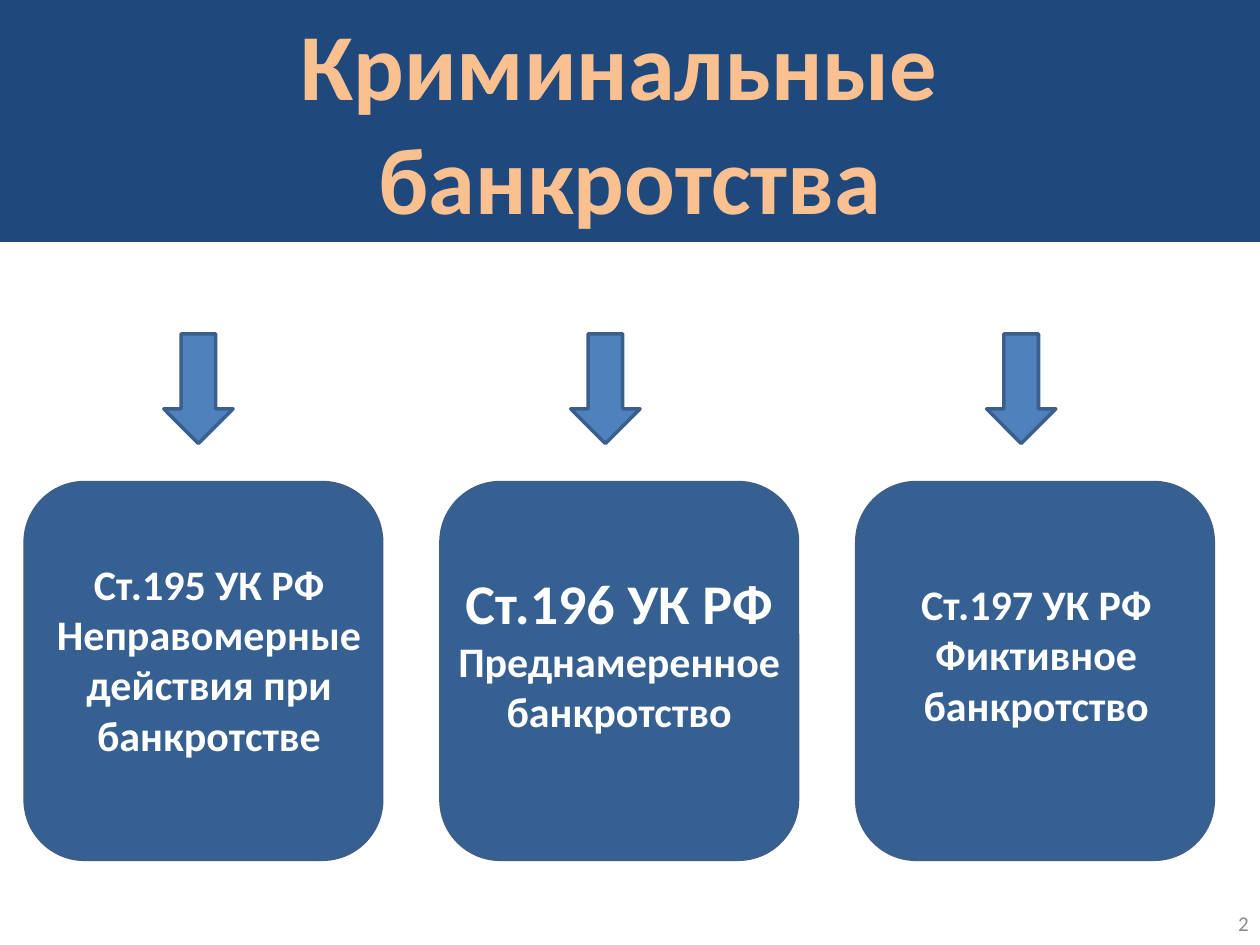
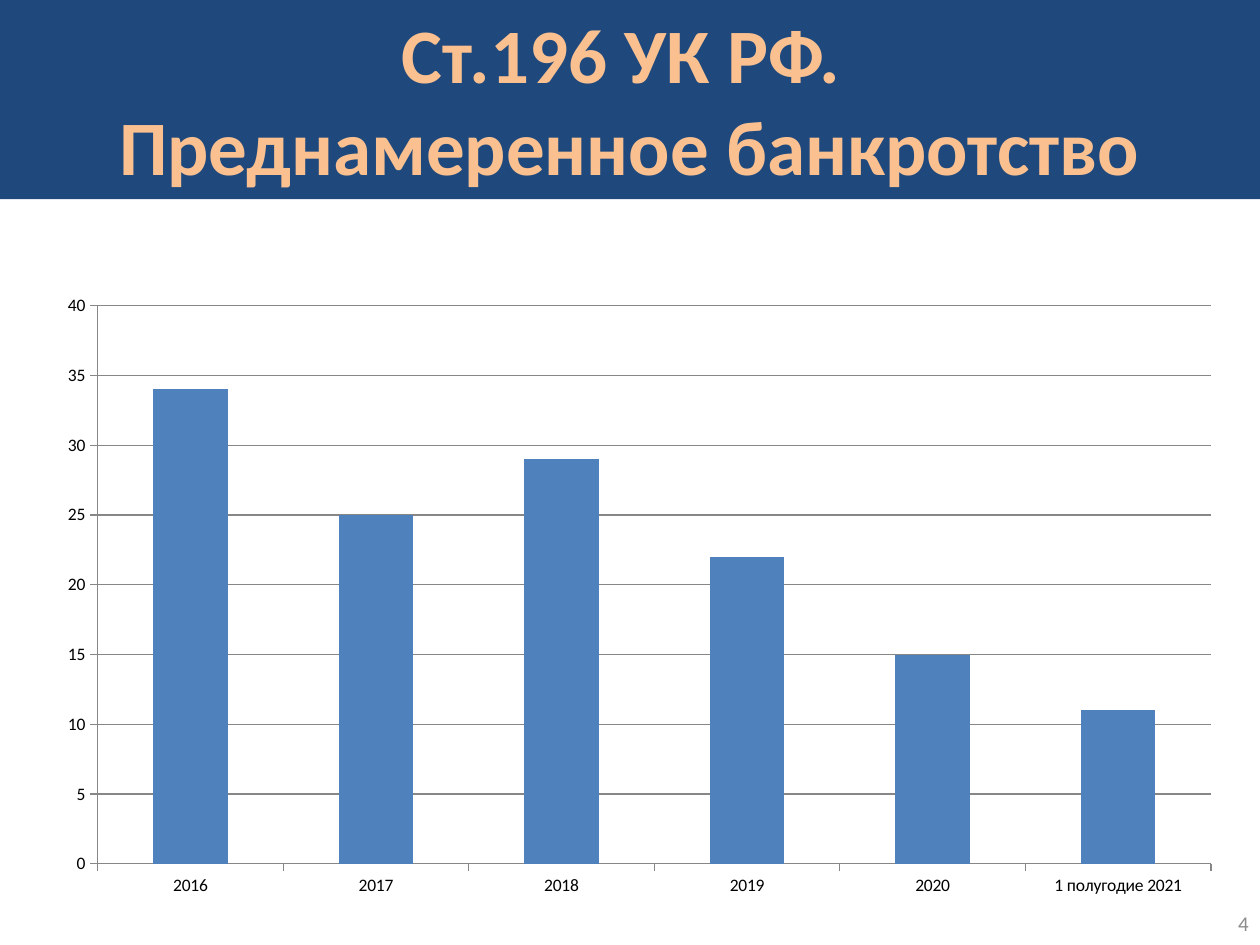
from pptx import Presentation
from pptx.chart.data import CategoryChartData
from pptx.dml.color import RGBColor
from pptx.enum.chart import XL_CHART_TYPE, XL_TICK_MARK
from pptx.enum.shapes import MSO_SHAPE
from pptx.enum.text import MSO_ANCHOR, PP_ALIGN
from pptx.util import Inches, Pt

# Shared style
NAVY = RGBColor(0x1F, 0x49, 0x7D)
PEACH = RGBColor(0xFA, 0xC0, 0x90)
CARD_BLUE = RGBColor(0x37, 0x60, 0x92)
BLUE = RGBColor(0x4F, 0x81, 0xBD)
OUTLINE = RGBColor(0x3A, 0x5F, 0x8C)
GRAY = RGBColor(0x8C, 0x8C, 0x8C)
AXIS_GRAY = RGBColor(0x87, 0x87, 0x87)
WHITE = RGBColor(0xFF, 0xFF, 0xFF)
BLACK = RGBColor(0, 0, 0)
FONT = "Calibri"

RECT = MSO_SHAPE.RECTANGLE
ROUND_RECT = MSO_SHAPE.ROUNDED_RECTANGLE
DOWN_ARROW = MSO_SHAPE.DOWN_ARROW
TOP, MIDDLE = MSO_ANCHOR.TOP, MSO_ANCHOR.MIDDLE
CENTER, RIGHT = PP_ALIGN.CENTER, PP_ALIGN.RIGHT
COLUMN = XL_CHART_TYPE.COLUMN_CLUSTERED
TICK_OUT = XL_TICK_MARK.OUTSIDE

# Cards: arrow left, text left, top, width, height, lines with sizes
CARD_LEFT, CARD_STEP = 0.2, 3.3
CARDS = [
    (1.3, (0.28, 4.38, 2.76, 2.02),
     [("Ст.195 УК РФ", 24), ("Неправомерные действия при банкротстве", 24)]),
    (4.53, (3.5, 4.46, 2.83, 1.75),
     [("Ст.196 УК РФ", 32), ("Преднамеренное банкротство", 24)]),
    (7.83, (6.81, 4.54, 2.83, 1.62),
     [("Ст.197 УК РФ", 24), ("Фиктивное банкротство", 24)]),
]

CASES_BY_YEAR = {"2016": 34, "2017": 25, "2018": 29, "2019": 22, "2020": 15,
                 "1 полугодие 2021": 11}


def write_lines(tf, lines, color, bold=True, align=CENTER, anchor=TOP):
    tf.word_wrap = True
    tf.vertical_anchor = anchor
    tf.text = "\n".join(text for text, _ in lines)
    for p, (_, size) in zip(tf.paragraphs, lines):
        p.alignment = align
        font = p.runs[0].font
        font.name, font.size, font.bold = FONT, Pt(size), bold
        font.color.rgb = color


def add_block(slide, kind, box, fill, line=None):
    sp = slide.shapes.add_shape(kind, *map(Inches, box))
    sp.shadow.inherit = False
    sp.fill.solid()
    sp.fill.fore_color.rgb = fill
    if line is None:
        sp.line.fill.background()
    else:
        sp.line.color.rgb = line
        sp.line.width = Pt(2)
    return sp


def add_text(slide, box, lines, color, **style):
    tb = slide.shapes.add_textbox(*map(Inches, box))
    write_lines(tb.text_frame, lines, color, **style)


def add_base_slide(prs, title, size, band_height, number):
    """Blank slide with the title band and the slide number."""
    slide = prs.slides.add_slide(prs.slide_layouts[6])
    add_text(slide, (7.68, 7.13, 2.33, 0.4), [(number, 12)], GRAY,
             bold=False, align=RIGHT, anchor=MIDDLE)
    band = add_block(slide, RECT, (0, 0, 10, band_height), NAVY)
    write_lines(band.text_frame, [(text, size) for text in title], PEACH)
    return slide


def add_card(slide, index, arrow_left, text_box, lines):
    left = CARD_LEFT + index * CARD_STEP
    add_block(slide, ROUND_RECT, (left, 3.83, 2.83, 2.99), CARD_BLUE, OUTLINE)
    add_text(slide, text_box, lines, WHITE)
    add_block(slide, DOWN_ARROW, (arrow_left, 2.65, 0.55, 0.87), BLUE, OUTLINE)


def add_column_chart(slide, box, values):
    data = CategoryChartData()
    data.categories = list(values)
    data.add_series("Series 1", list(values.values()))
    chart = slide.shapes.add_chart(COLUMN, *map(Inches, box), data).chart
    chart.has_legend = False
    chart.has_title = False
    chart.font.name, chart.font.size = FONT, Pt(10)
    chart.font.color.rgb = BLACK

    plot = chart.plots[0]
    plot.gap_width = 150
    plot.vary_by_categories = False
    fill = plot.series[0].format.fill
    fill.solid()
    fill.fore_color.rgb = BLUE

    for axis in (chart.category_axis, chart.value_axis):
        axis.major_tick_mark = TICK_OUT
        axis.format.line.color.rgb = AXIS_GRAY
    axis = chart.value_axis
    axis.minimum_scale, axis.maximum_scale, axis.major_unit = 0, 40, 5
    axis.has_major_gridlines = True
    axis.major_gridlines.format.line.color.rgb = AXIS_GRAY


def main():
    prs = Presentation()
    prs.slide_width, prs.slide_height = Inches(10), Inches(7.5)

    # Kinds of criminal bankruptcy
    slide = add_base_slide(prs, ["Криминальные ", "банкротства"], 54, 1.92, "2")
    for index, card in enumerate(CARDS):
        add_card(slide, index, *card)

    # Deliberate bankruptcy by year
    slide = add_base_slide(
        prs, ["Ст.196 УК РФ. ", "Преднамеренное банкротство"], 44, 1.58, "4")
    add_column_chart(slide, (0.35, 2.25, 9.45, 4.96), CASES_BY_YEAR)

    prs.save("out.pptx")


if __name__ == "__main__":
    main()
